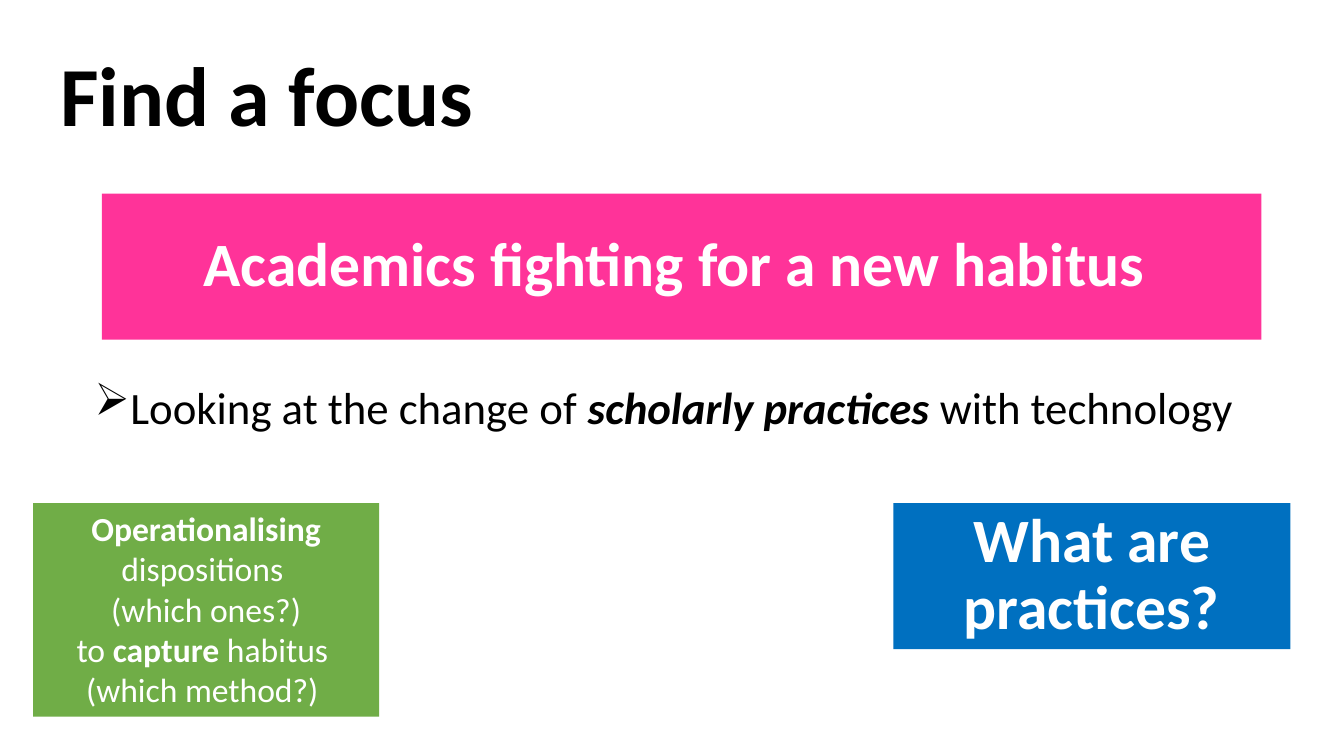
"""Build the "Find a focus" slide on scholarly practices and habitus."""
from lxml import etree
from pptx import Presentation
from pptx.dml.color import RGBColor
from pptx.enum.text import MSO_ANCHOR, PP_ALIGN
from pptx.oxml.ns import qn
from pptx.util import Inches, Pt

LEFT, CENTER = PP_ALIGN.LEFT, PP_ALIGN.CENTER
TOP, MIDDLE = MSO_ANCHOR.TOP, MSO_ANCHOR.MIDDLE
BLACK = RGBColor(0x00, 0x00, 0x00)
WHITE = RGBColor(0xFF, 0xFF, 0xFF)
PINK = RGBColor(0xFF, 0x33, 0x99)
GREEN = RGBColor(0x70, 0xAD, 0x47)
BLUE = RGBColor(0x00, 0x70, 0xC0)

WIDE, BAND, LOWER_ROW = 11.5, 1.45, 4.99


def place(sp, left, top, width, height):
    sp.left, sp.top, sp.width, sp.height = map(Inches, (left, top, width, height))


def write(sp, paragraphs, size, color, align, anchor, spacing):
    tf = sp.text_frame
    tf.word_wrap = True
    tf.vertical_anchor = anchor
    for i, runs in enumerate(paragraphs):
        p = tf.paragraphs[0] if i == 0 else tf.add_paragraph()
        p.alignment, p.line_spacing = align, spacing
        for text, bold, italic in runs:
            r = p.add_run()
            r.text = text
            font = {"name": "Calibri", "size": Pt(size), "bold": bold, "italic": italic}
            for name, value in font.items():
                setattr(r.font, name, value)
            r.font.color.rgb = color


prs = Presentation()
prs.slide_width, prs.slide_height = Inches(13.33), Inches(7.5)
s = prs.slides.add_slide(prs.slide_layouts[5])

title = s.shapes.title
heading, focus, dispositions, practices = (
    s.shapes.add_textbox(0, 0, 0, 0) for _ in range(4))

boxes = [
    (title, (1.01, 1.92, WIDE, BAND), PINK,
     [[("Academics fighting for a new habitus ", True, False)]],
     (44, WHITE, CENTER, MIDDLE, 0.9)),
    (heading, (0.5, 0.26, WIDE, BAND), None,
     [[("Find a focus", True, False)]],
     (60, BLACK, LEFT, MIDDLE, 0.9)),
    (focus, (0.84, 3.86, WIDE, 0.86), None,
     [[("Looking at the change of ", False, False),
       ("scholarly practices ", True, True),
       ("with technology", False, False)]],
     (32, BLACK, LEFT, TOP, 0.7)),
    (dispositions, (0.33, LOWER_ROW, 3.43, 2.12), GREEN,
     [[("Operationalising", True, False), (" dispositions ", False, False)],
      [("(which ones?)", False, False)],
      [("to ", False, False), ("capture", True, False), (" habitus ", False, False)],
      [("(which method?) ", False, False)]],
     (24, WHITE, CENTER, TOP, 1.0)),
    (practices, (8.86, LOWER_ROW, 3.94, BAND), BLUE,
     [[("What are practices?", True, False)]],
     (44, WHITE, CENTER, MIDDLE, 0.9)),
]
for sp, box, fill, paragraphs, style in boxes:
    place(sp, *box)
    if fill is not None:
        sp.fill.solid()
        sp.fill.fore_color.rgb = fill
    write(sp, paragraphs, *style)

pPr = focus.text_frame.paragraphs[0]._p.get_or_add_pPr()
pPr.set("marL", str(Inches(0.25)))
pPr.set("indent", str(-Inches(0.25)))
etree.SubElement(pPr, qn("a:buFont")).set("typeface", "Wingdings")
etree.SubElement(pPr, qn("a:buChar")).set("char", "Ø")

prs.save("out.pptx")
